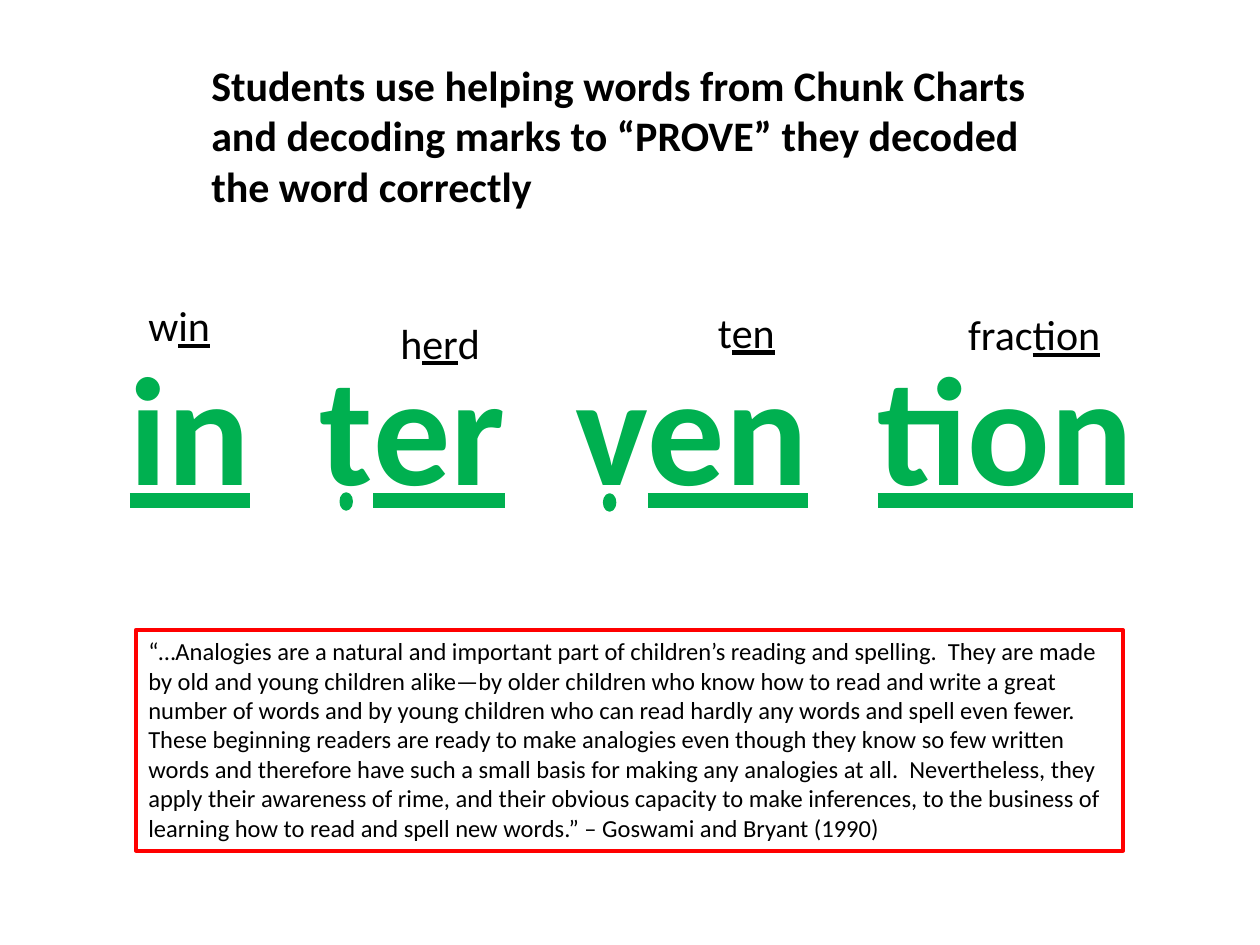
from dataclasses import dataclass

from pptx import Presentation
from pptx.dml.color import RGBColor
from pptx.enum.shapes import MSO_SHAPE
from pptx.enum.text import MSO_ANCHOR, MSO_AUTO_SIZE, PP_ALIGN
from pptx.util import Cm, Pt

LEFT, CENTER, RIGHT = PP_ALIGN.LEFT, PP_ALIGN.CENTER, PP_ALIGN.RIGHT
TOP = MSO_ANCHOR.TOP
FIT_SHAPE = MSO_AUTO_SIZE.SHAPE_TO_FIT_TEXT
OVAL = MSO_SHAPE.OVAL


@dataclass(frozen=True)
class Theme:
    font: str = "Calibri"
    black: RGBColor = RGBColor(0, 0, 0)
    green: RGBColor = RGBColor(0x00, 0xB0, 0x50)
    red: RGBColor = RGBColor(0xFF, 0, 0)
    word_size: int = 88
    heading_size: int = 24
    quote_size: int = 14
    dot_line: float = 2
    frame_line: float = 2.25


THEME = Theme()

HEADING = (
    "Students use helping words from Chunk Charts and decoding marks "
    "to “PROVE” they decoded the word correctly"
)
DECODED_WORD = [
    ("in", True), ("  t", False), ("er", True), ("  v", False),
    ("en", True), ("  ", False), ("tion", True),
]
HELPING_WORDS = [
    ((2.74, 5.92, 2.11), LEFT, [("w", False), ("in", True)]),
    ((7.82, 6.27, 2.11), LEFT, [("h", False), ("er", True), ("d", False)]),
    ((14.22, 6.05, 2.11), LEFT, [("t", False), ("en", True)]),
    ((17.78, 6.1, 4.65), RIGHT, [("frac", False), ("tion", True)]),
]
HELPING_HEIGHT = 1.27
QUOTE = [
    "“…Analogies are a natural and important part of children’s reading and "
    "spelling.  They are made by old and young children alike—by older "
    "children who know how to read and write a great number of words and by "
    "young children who can read hardly any words and spell even fewer.",
    "These beginning readers are ready to make analogies even though they "
    "know so few written words and therefore have such a small basis for "
    "making any analogies at all.  Nevertheless, they apply their awareness "
    "of rime, and their obvious capacity to make inferences, to the business "
    "of learning how to read and spell new words.” – Goswami and Bryant (1990)",
]
DOTS = [(6.88, 9.96), (12.19, 9.98)]
DOT_SIZE = (0.2, 0.3)


def add_text(page, place, paragraphs, size, color=THEME.black,
             bold=False, align=LEFT, wrap=True):
    """Add a text box whose paragraphs are lists of (text, underlined) spans."""
    box = page.shapes.add_textbox(*map(Cm, place))
    frame = box.text_frame
    frame.word_wrap = wrap
    frame.auto_size = FIT_SHAPE
    frame.vertical_anchor = TOP
    for index, spans in enumerate(paragraphs):
        para = frame.add_paragraph() if index else frame.paragraphs[0]
        para.alignment = align
        for text, underlined in spans:
            span = para.add_run()
            span.text = text
            span.font.name = THEME.font
            span.font.size = Pt(size)
            span.font.bold = bold
            span.font.underline = underlined
            span.font.color.rgb = color
    return box


def add_dot(page, left, top):
    """Add a decoding dot below a consonant."""
    dot = page.shapes.add_shape(OVAL, *map(Cm, (left, top, *DOT_SIZE)))
    dot.shadow.inherit = False
    dot.fill.solid()
    dot.fill.fore_color.rgb = THEME.green
    dot.line.color.rgb = THEME.green
    dot.line.width = Pt(THEME.dot_line)


def main():
    """Build the slide on decoding by analogy."""
    deck = Presentation()
    deck.slide_width, deck.slide_height = Cm(25.4), Cm(19.05)
    page = deck.slides.add_slide(deck.slide_layouts[6])

    add_text(page, (2.29, 6.55, 20.88, 4.01), [DECODED_WORD], THEME.word_size,
             THEME.green, bold=True, align=CENTER, wrap=False)
    for left, top in DOTS:
        add_dot(page, left, top)
    for place, align, spans in HELPING_WORDS:
        add_text(page, (*place, HELPING_HEIGHT), [spans],
                 THEME.heading_size, align=align)
    add_text(page, (4.01, 1.07, 17.78, 3.33), [[(HEADING, False)]],
             THEME.heading_size, bold=True)
    quote_box = add_text(page, (2.74, 12.7, 19.9, 4.45),
                         [[(text, False)] for text in QUOTE], THEME.quote_size)
    quote_box.line.color.rgb = THEME.red
    quote_box.line.width = Pt(THEME.frame_line)

    deck.save("out.pptx")


if __name__ == "__main__":
    main()
